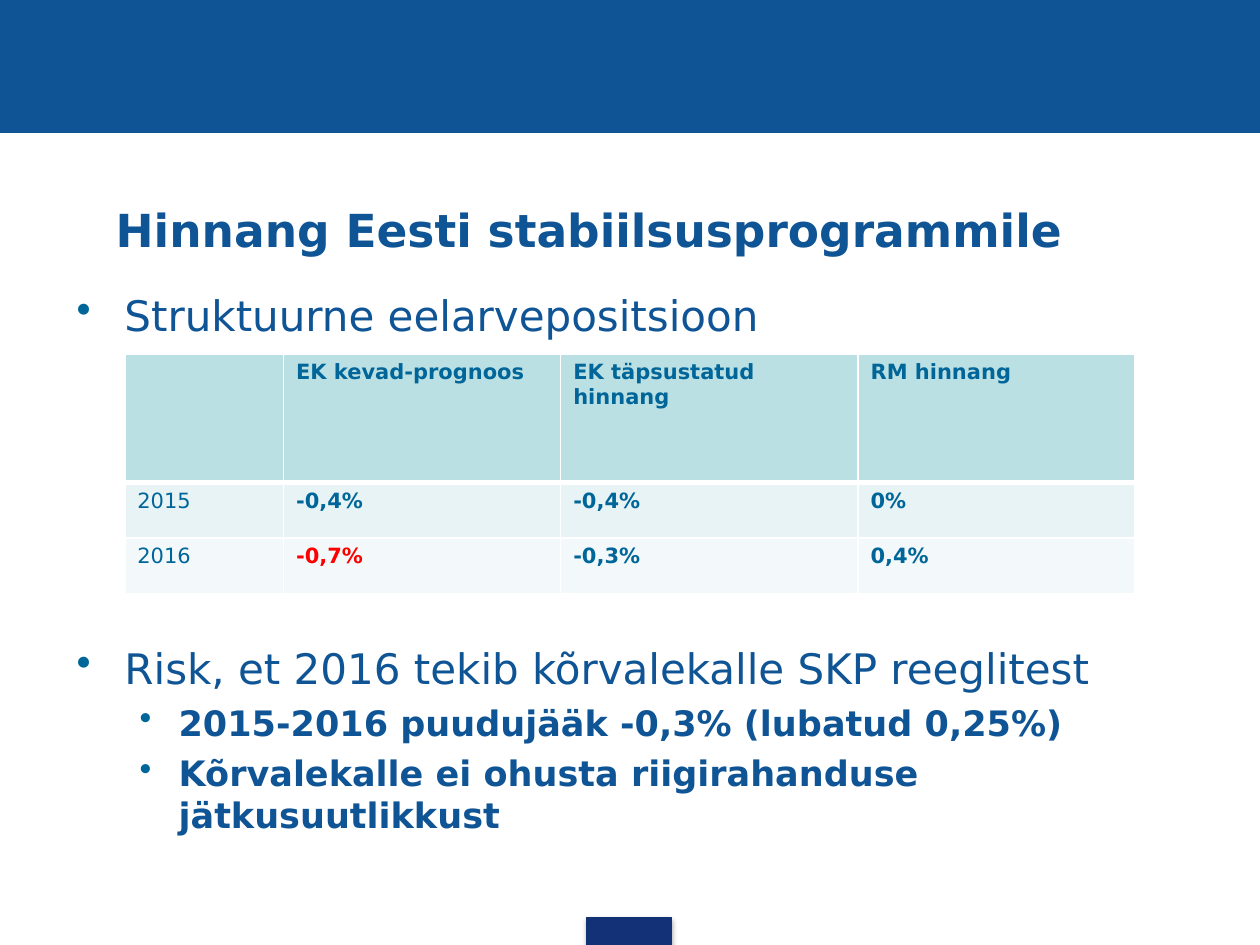
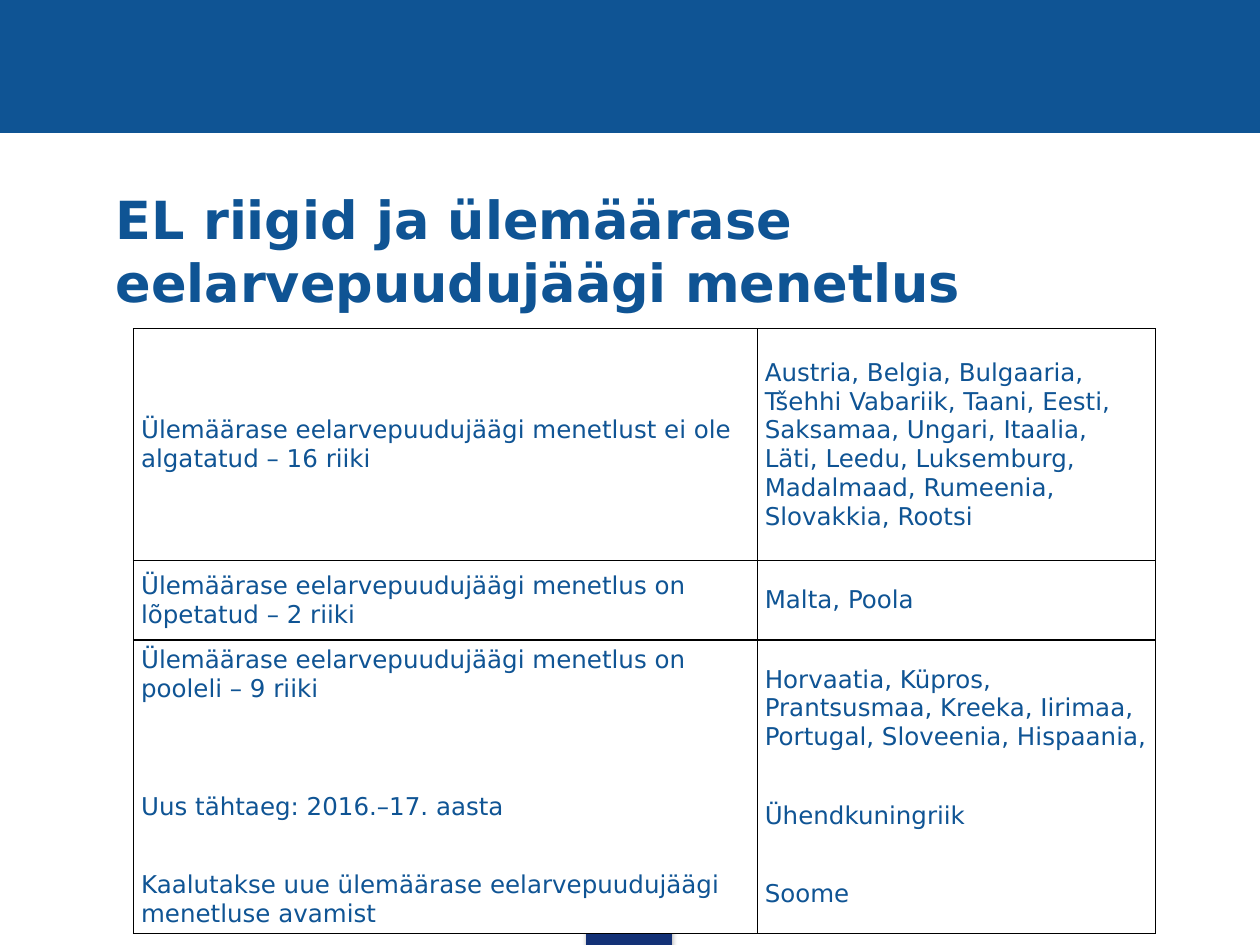
from pptx import Presentation
from pptx.util import Inches, Pt
from pptx.dml.color import RGBColor as Rgb
from pptx.enum.shapes import MSO_SHAPE as Shape
from pptx.enum.text import MSO_ANCHOR as Anchor
from pptx.oxml import parse_xml
from pptx.oxml.ns import nsdecls

BLUE = Rgb(0x0F, 0x54, 0x94)
NAVY = Rgb(0x13, 0x31, 0x76)
TEAL = Rgb(0x00, 0x66, 0x99)
RED = Rgb(0xFF, 0x00, 0x00)
WHITE = Rgb(0xFF, 0xFF, 0xFF)
BLACK = Rgb(0x00, 0x00, 0x00)
HEAD = Rgb(0xBB, 0xE0, 0xE3)
LIGHT = Rgb(0xE7, 0xF3, 0xF4)
PALE = Rgb(0xF3, 0xF9, 0xFA)


def node(xml):
    tag, rest = xml.split(" ", 1)
    return parse_xml(f"{tag} {nsdecls('a')} {rest}")


class Deck:
    font = "DejaVu Sans"

    def __init__(self):
        self.prs = Presentation()
        self.prs.slide_width = Inches(10)
        self.prs.slide_height = Inches(7.5)

    def start(self):
        self.slide = self.prs.slides.add_slide(self.prs.slide_layouts[6])
        self.block(0, 0, 10, 1.05, BLUE)
        tab = self.block(4.66, 7.28, 0.67, 0.22, NAVY)
        tab._element.spPr.find(".//{*}effectLst").append(node(
            f'<a:outerShdw blurRad="{Pt(3.1)}" dist="{Pt(1.8)}" dir="5400000">'
            '<a:srgbClr val="000000"><a:alpha val="35000"/></a:srgbClr>'
            '</a:outerShdw>'))

    def block(self, x, y, w, h, color):
        box = self.slide.shapes.add_shape(
            Shape.RECTANGLE, Inches(x), Inches(y), Inches(w), Inches(h))
        box.shadow.inherit = False
        box.fill.solid()
        box.fill.fore_color.rgb = color
        box.line.color.rgb = color
        box.line.width = Pt(0.75)
        return box

    def style(self, para, size, color, bold=False):
        for run in para.runs:
            font = run.font
            font.name, font.size, font.bold = self.font, Pt(size), bold
            font.color.rgb = color

    def frame(self, x, y, w, h, text):
        box = self.slide.shapes.add_textbox(
            Inches(x), Inches(y), Inches(w), Inches(h))
        box.text_frame.word_wrap = True
        box.text_frame.text = text
        return box.text_frame

    def title(self, text, y, size):
        frame = self.frame(0.43, y, 9, 1.02, text)
        frame.vertical_anchor = Anchor.MIDDLE
        para = frame.paragraphs[0]
        para._p.get_or_add_pPr().set("marL", str(Inches(0.39)))
        self.style(para, size, BLUE, True)

    def list(self, x, y, w, h, items):
        frame = self.frame(x, y, w, h, "\n".join(item[0] for item in items))
        for para, (_, level, gap) in zip(frame.paragraphs, items):
            left, hang, size = [(0.38, 0.38, 24), (0.81, 0.31, 20)][level]
            props = para._p.get_or_add_pPr()
            props.set("marL", str(Inches(left)))
            props.set("indent", str(-Inches(hang)))
            props.append(node(
                f'<a:buClr ><a:srgbClr val="{TEAL}"/></a:buClr>'))
            props.append(node('<a:buChar char="•"/>'))
            if gap:
                para.space_before = Pt(gap)
            self.style(para, size, BLUE, level == 1)

    def table(self, x, y, cols, rows, texts):
        grid = self.slide.shapes.add_table(
            len(rows), len(cols), Inches(x), Inches(y),
            Inches(sum(cols)), Inches(sum(rows))).table
        grid.first_row = grid.horz_banding = False
        for col, width in zip(grid.columns, cols):
            col.width = Inches(width)
        for row, height, line in zip(grid.rows, rows, texts):
            row.height = Inches(height)
            for cell, text in zip(row.cells, line):
                cell.text = text
        return grid

    def paint(self, cell, fill, edge, **widths):
        props = cell._tc.get_or_add_tcPr()
        for side in "LRTB":
            width = Pt(widths.get(side, widths["all"]))
            props.append(node(
                f'<a:ln{side} w="{width}"><a:solidFill>'
                f'<a:srgbClr val="{edge}"/></a:solidFill></a:ln{side}>'))
        cell.fill.solid()
        cell.fill.fore_color.rgb = fill


def budget(deck):
    deck.start()
    deck.title("Hinnang Eesti stabiilsusprogrammile", 1.31, 26)
    deck.list(0.51, 2.25, 9, 4.96, [
        ("Struktuurne eelarvepositsioon", 0, 0),
        ("Risk, et 2016 tekib kõrvalekalle SKP reeglitest", 0, 173),
        ("2015-2016 puudujääk -0,3% (lubatud 0,25%)", 1, 4.7),
        ("Kõrvalekalle ei ohusta riigirahanduse jätkusuutlikkust", 1, 4.7)])
    grid = deck.table(0.99, 2.81, [1.26, 2.2, 2.36, 2.2], [1.02, 0.44, 0.44], [
        ["", "EK kevad-prognoos", "EK täpsustatud hinnang", "RM hinnang"],
        ["2015", "-0,4%", "-0,4%", "0%"],
        ["2016", "-0,7%", "-0,3%", "0,4%"]])
    edges = [{"B": 3}, {"T": 3}, {}]
    for row, fill, edge in zip(grid.rows, [HEAD, LIGHT, PALE], edges):
        for col, cell in enumerate(row.cells):
            deck.paint(cell, fill, WHITE, all=1, **edge)
            color = RED if cell.text == "-0,7%" else TEAL
            deck.style(cell.text_frame.paragraphs[0], 12, color, col > 0)


def states(deck):
    deck.start()
    deck.title("EL riigid ja ülemäärase eelarvepuudujäägi menetlus", 1.47, 30)
    grid = deck.table(1.06, 2.61, [4.95, 3.16], [1.84, 0.63, 2.3], [
        ["Ülemäärase eelarvepuudujäägi menetlust ei ole algatatud – 16 riiki",
         "Austria, Belgia, Bulgaaria, Tšehhi Vabariik, Taani, Eesti, "
         "Saksamaa, Ungari, Itaalia, Läti, Leedu, Luksemburg, "
         "Madalmaad, Rumeenia, Slovakkia, Rootsi"],
        ["Ülemäärase eelarvepuudujäägi menetlus on lõpetatud – 2 riiki",
         "Malta, Poola"],
        ["Ülemäärase eelarvepuudujäägi menetlus on pooleli – 9 riiki\n"
         "Uus tähtaeg: 2016.–17. aasta\n"
         "Kaalutakse uue ülemäärase eelarvepuudujäägi menetluse avamist",
         "Horvaatia, Küpros, Prantsusmaa, Kreeka, Iirimaa, "
         "Portugal, Sloveenia, Hispaania,\nÜhendkuningriik\nSoome"]])
    gaps = [[0, 51, 28.3], [0, 28.3, 28.3]]
    for row in grid.rows:
        for cell, steps in zip(row.cells, gaps):
            deck.paint(cell, WHITE, BLACK, all=0.75)
            cell.vertical_anchor = Anchor.MIDDLE
            cell.margin_left = cell.margin_right = Inches(0.06)
            cell.margin_top = cell.margin_bottom = Inches(0.03)
            for para, gap in zip(cell.text_frame.paragraphs, steps):
                if gap:
                    para.space_before = Pt(gap)
                deck.style(para, 14, BLUE)


def main():
    deck = Deck()
    budget(deck)
    states(deck)
    deck.prs.save("out.pptx")


if __name__ == "__main__":
    main()
